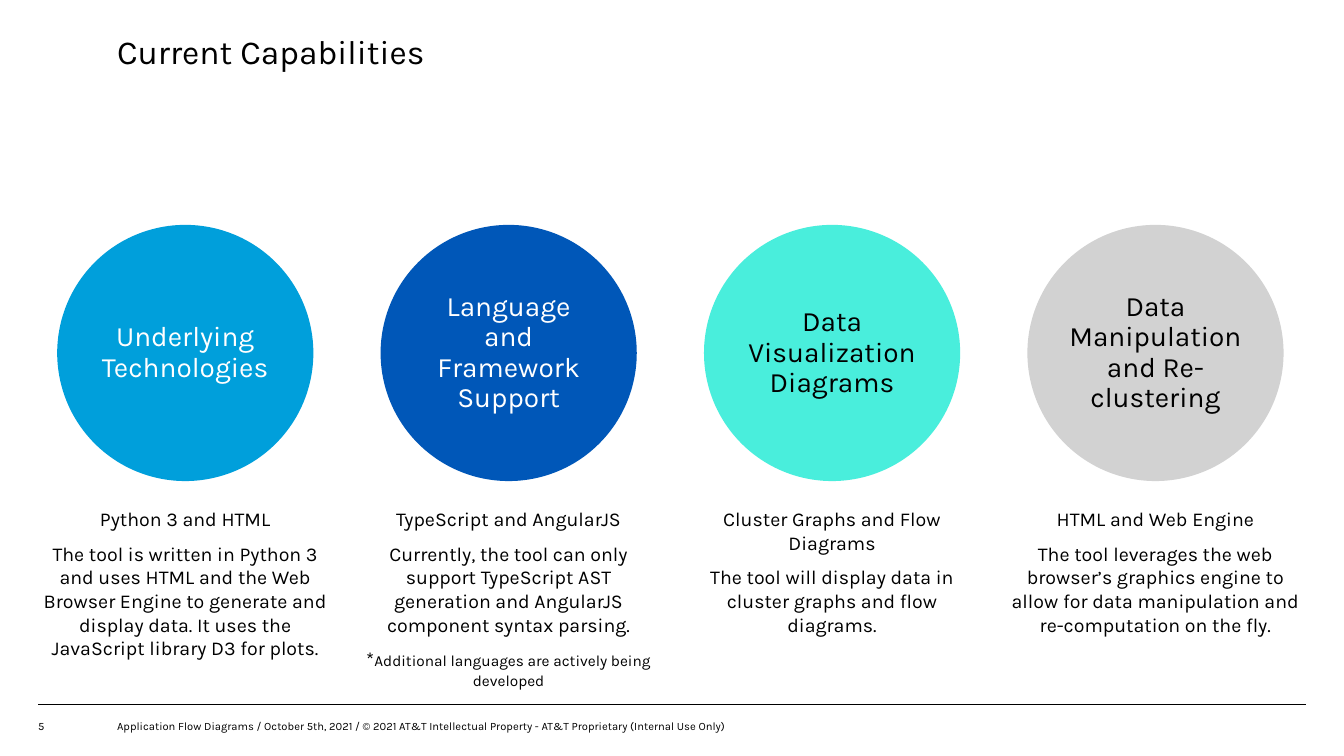
from pptx import Presentation
from pptx.dml.color import RGBColor
from pptx.enum.shapes import MSO_CONNECTOR, MSO_SHAPE
from pptx.enum.text import MSO_ANCHOR, PP_ALIGN
from pptx.oxml.ns import qn
from pptx.util import Cm, Pt
from lxml.etree import SubElement

TITLE = "Current Capabilities"
PAGE_NUMBER = "5"
FOOTER = ("Application Flow Diagrams / October 5th, 2021 / © 2021 AT&T Intellectual Property"
          " - AT&T Proprietary (Internal Use Only)")
COLORS = {"black": "000000", "white": "FFFFFF", "sky": "009FDB", "cobalt": "0057B8",
          "mint": "49EEDC", "gray": "D2D2D2"}
FONT = "Karla"

# heading, circle colour, heading colour, paragraphs; each paragraph is a list of (text, size)
CAPABILITIES = [
    ("Underlying Technologies", "sky", "white", [
        [("Python 3 and HTML", 14)],
        [("The tool is written in Python 3 and uses HTML and the Web Browser Engine to generate "
          "and display data. It uses the JavaScript library D3 for plots.", 14)],
    ]),
    ("Language and Framework Support", "cobalt", "white", [
        [("TypeScript and AngularJS", 14)],
        [("Currently, the tool can only support TypeScript AST generation and AngularJS "
          "component syntax parsing.", 14)],
        [("*", 14), ("Additional languages are actively being developed", 11)],
    ]),
    ("Data Visualization Diagrams", "mint", "black", [
        [("Cluster Graphs and Flow Diagrams", 14)],
        [("The tool will display data in cluster graphs and flow diagrams.", 14)],
    ]),
    ("Data Manipulation and Re-clustering", "gray", "black", [
        [("HTML and Web Engine", 14)],
        [("The tool leverages the web browser’s graphics engine to allow for data manipulation "
          "and re-computation on the fly.", 14)],
    ]),
]

FIRST_CENTER, PITCH = 4.67, 8.15
DIAMETER, CIRCLE_TOP = 6.35, 5.72
DETAIL_WIDTH, DETAIL_TOP, DETAIL_HEIGHT = 7.52, 12.78, 4.34
RULE_LEFT, RULE_RIGHT, RULE_Y = 0.96, 32.9, 17.75
TEXT_LEFT, FOOTER_TOP, FOOTER_HEIGHT = 2.95, 18.03, 0.53


def rgb(name):
    return RGBColor.from_string(COLORS[name])


def write(shape, paragraphs, color="black", align=PP_ALIGN.LEFT, anchor=MSO_ANCHOR.TOP,
          line_spacing=None, space_after=0):
    """Fill a shape with paragraphs, each a list of (text, size) runs."""
    frame = shape.text_frame
    frame.word_wrap = True
    frame.vertical_anchor = anchor
    frame.margin_left = frame.margin_right = frame.margin_top = frame.margin_bottom = 0
    for index, runs in enumerate(paragraphs):
        paragraph = frame.add_paragraph() if index else frame.paragraphs[0]
        paragraph.alignment = align
        paragraph.line_spacing = line_spacing
        paragraph.space_after = Pt(space_after)
        for text, size in runs:
            run = paragraph.add_run()
            run.text = text
            run.font.name = FONT
            run.font.size = Pt(size)
            run.font.color.rgb = rgb(color)


def add_text(slide, left, top, width, height, paragraphs, **style):
    box = slide.shapes.add_textbox(Cm(left), Cm(top), Cm(width), Cm(height))
    write(box, paragraphs, **style)


def add_capability(slide, center, heading, fill, heading_color, details):
    circle = slide.shapes.add_shape(MSO_SHAPE.OVAL, Cm(center - DIAMETER / 2), Cm(CIRCLE_TOP),
                                    Cm(DIAMETER), Cm(DIAMETER))
    circle.shadow.inherit = False
    circle.fill.solid()
    circle.fill.fore_color.rgb = circle.line.color.rgb = rgb(fill)
    circle.line.width = Pt(3)
    write(circle, [[(heading, 20)]], color=heading_color, align=PP_ALIGN.CENTER,
          anchor=MSO_ANCHOR.MIDDLE, line_spacing=0.9)
    add_text(slide, center - DETAIL_WIDTH / 2, DETAIL_TOP, DETAIL_WIDTH, DETAIL_HEIGHT,
             details, align=PP_ALIGN.CENTER, space_after=8)


def add_footer(slide):
    rule = slide.shapes.add_connector(MSO_CONNECTOR.STRAIGHT, Cm(RULE_LEFT), Cm(RULE_Y),
                                      Cm(RULE_RIGHT), Cm(RULE_Y))
    rule.line.color.rgb = rgb("black")
    rule.line.width = Pt(0.5)
    SubElement(rule._element.spPr, qn("a:effectLst"))
    add_text(slide, RULE_LEFT, FOOTER_TOP, TEXT_LEFT - RULE_LEFT, FOOTER_HEIGHT,
             [[(PAGE_NUMBER, 8)]], anchor=MSO_ANCHOR.MIDDLE, line_spacing=Pt(10))
    add_text(slide, TEXT_LEFT, FOOTER_TOP, 15.7, FOOTER_HEIGHT, [[(FOOTER, 8)]],
             anchor=MSO_ANCHOR.MIDDLE)


def main():
    deck = Presentation()
    deck.slide_width, deck.slide_height = Cm(33.87), Cm(19.05)
    slide = deck.slides.add_slide(deck.slide_layouts[6])
    add_text(slide, TEXT_LEFT, 0.79, RULE_RIGHT - TEXT_LEFT, 2.39, [[(TITLE, 24)]])
    for column, capability in enumerate(CAPABILITIES):
        add_capability(slide, FIRST_CENTER + column * PITCH, *capability)
    add_footer(slide)
    deck.save("out.pptx")


if __name__ == "__main__":
    main()
